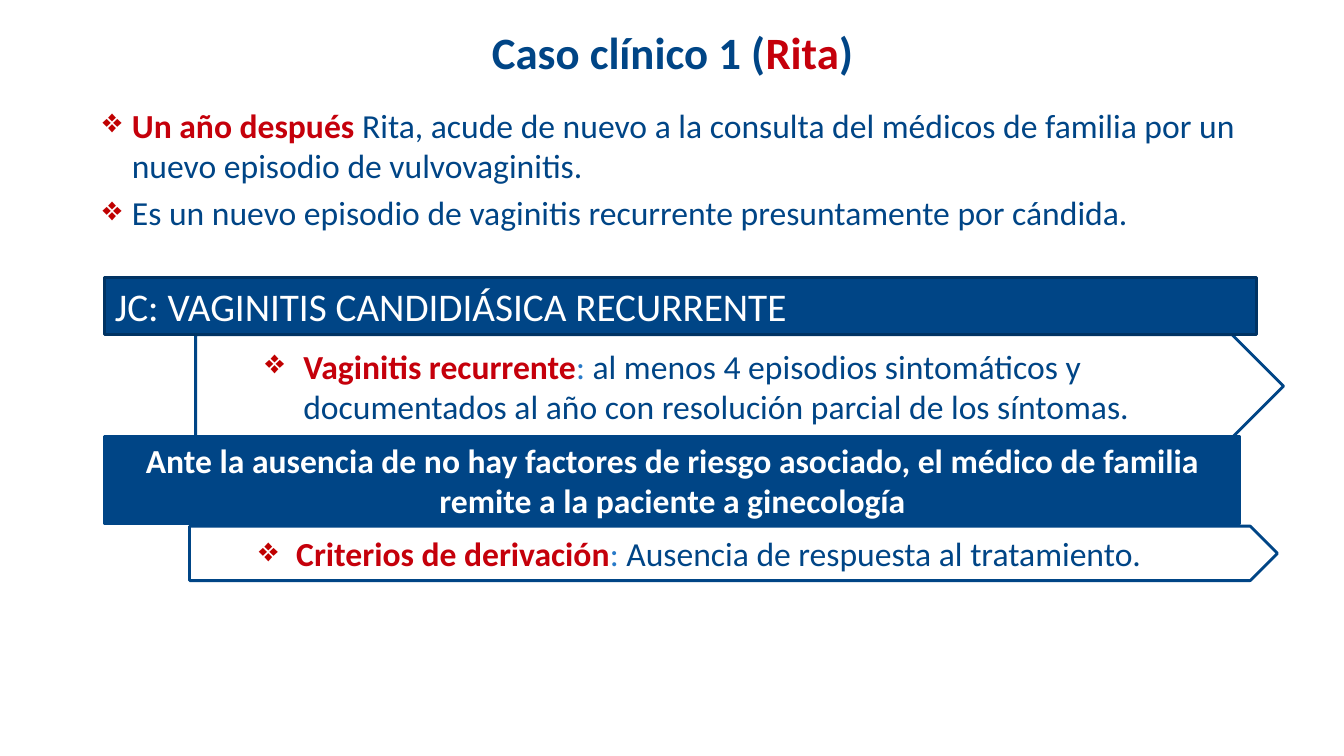
from lxml import etree
from pptx import Presentation
from pptx.dml.color import RGBColor
from pptx.enum.shapes import MSO_SHAPE
from pptx.enum.text import MSO_ANCHOR, PP_ALIGN
from pptx.oxml.ns import qn
from pptx.util import Inches, Pt

RECT, ARROW = MSO_SHAPE.RECTANGLE, MSO_SHAPE.PENTAGON
TOP, MIDDLE = MSO_ANCHOR.TOP, MSO_ANCHOR.MIDDLE
LEFT, CENTER = PP_ALIGN.LEFT, PP_ALIGN.CENTER
BLUE, RED, SKY = "004586", "C5000B", "287AC8"
DARK, WHITE, MARK = "003363", "FFFFFF", "C00000"


def color(code):
    """Turn a hex string into a colour."""
    return RGBColor.from_string(code)


def add_bullet(para, margin, hang):
    """Give a paragraph a red diamond bullet and a hanging indent."""
    props = para._p.get_or_add_pPr()
    props.set("marL", str(Inches(margin)))
    props.set("indent", str(Inches(-hang)))
    tint = etree.SubElement(props, qn("a:buClr"))
    etree.SubElement(tint, qn("a:srgbClr")).set("val", MARK)
    etree.SubElement(props, qn("a:buChar")).set("char", "❖")


def add_runs(para, runs, size):
    """Add runs given as text, colour and bold."""
    for text, code, bold in runs:
        run = para.add_run()
        run.text = text
        font = run.font
        font.name = "Calibri"
        font.size = Pt(size)
        font.bold = bold
        font.color.rgb = color(code)


def fill_text(shape, paras, size=24, align=LEFT, anchor=MIDDLE, indent=None):
    """Write paragraphs of runs into a shape."""
    frame = shape.text_frame
    frame.word_wrap = True
    frame.vertical_anchor = anchor
    for i, runs in enumerate(paras):
        para = frame.add_paragraph() if i else frame.paragraphs[0]
        if indent:
            add_bullet(para, *indent)
        para.alignment = align
        if i:
            para.space_before = Pt(4.8)
        add_runs(para, runs, size)


def add_text(slide, place, paras, **style):
    """Add a text box."""
    box = slide.shapes.add_textbox(*map(Inches, place))
    fill_text(box, paras, **style)


def add_panel(slide, kind, place, fill, line, runs, **style):
    """Add a filled and outlined shape with one paragraph."""
    panel = slide.shapes.add_shape(kind, *map(Inches, place))
    panel.shadow.inherit = False
    panel.fill.solid()
    panel.fill.fore_color.rgb = color(fill)
    panel.line.color.rgb = color(line)
    panel.line.width = Pt(2)
    fill_text(panel, [runs], **style)


def main():
    """Build the slide and save it."""
    deck = Presentation()
    deck.slide_width, deck.slide_height = Inches(13.33), Inches(7.5)
    slide = deck.slides.add_slide(deck.slide_layouts[6])

    add_text(slide, (0.67, 0.18, 12, 0.66), [[
        ("Caso clínico 1 (", BLUE, True), ("Rita", RED, True),
        (")", BLUE, True)]], size=32, align=CENTER)
    add_text(slide, (0.33, 0.99, 12.67, 3.23), [
        [("Un año después ", RED, True),
         ("Rita, acude de nuevo a la consulta del médicos de familia por un "
          "nuevo episodio de vulvovaginitis.", BLUE, False)],
        [("Es un nuevo episodio de vaginitis recurrente presuntamente por "
          "cándida.", BLUE, False)]], anchor=TOP, indent=(0.88, 0.29))

    add_panel(slide, ARROW, (1.94, 3.32, 10.79, 1.02), WHITE, BLUE, [
        ("Vaginitis recurrente", RED, True), (": ", SKY, False),
        ("al menos 4 episodios sintomáticos y documentados al año con "
         "resolución parcial de los síntomas.", BLUE, False)],
        indent=(0.97, 0.38))
    add_panel(slide, RECT, (1.04, 4.33, 11.26, 0.87), BLUE, BLUE, [
        ("Ante la ausencia de no hay factores de riesgo asociado, el médico "
         "de familia remite a la paciente a ginecología", WHITE, True)],
        align=CENTER)
    add_panel(slide, ARROW, (1.88, 5.22, 10.79, 0.54), WHITE, BLUE, [
        ("Criterios de derivación", RED, True), (": ", SKY, False),
        ("Ausencia de respuesta al tratamiento.", BLUE, False)],
        indent=(0.96, 0.37))
    add_panel(slide, RECT, (1.04, 2.75, 11.42, 0.57), BLUE, DARK, [
        ("JC: VAGINITIS CANDIDIÁSICA RECURRENTE", WHITE, False)],
        size=28, anchor=TOP)
    deck.save("out.pptx")


if __name__ == "__main__":
    main()
